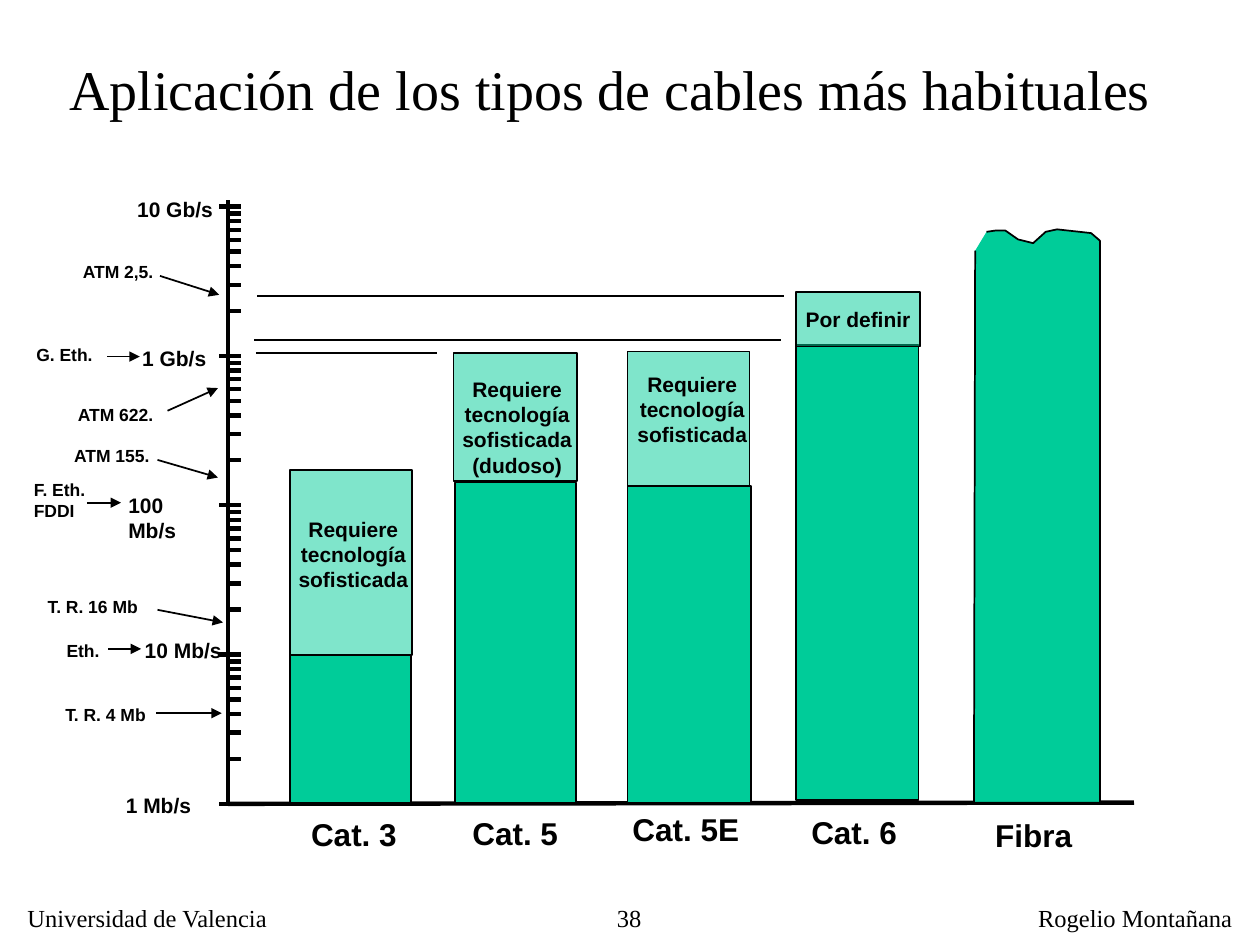
import math

from lxml import etree
from pptx import Presentation
from pptx.dml.color import RGBColor
from pptx.enum import shapes, text
from pptx.oxml.ns import qn
from pptx.util import Inches, Pt

BLACK = RGBColor(0x00, 0x00, 0x00)
GREEN = RGBColor(0x00, 0xCC, 0x99)
SERIF, SANS = "Times New Roman", "Arial"
LEFT, CENTER, RIGHT = text.PP_ALIGN.LEFT, text.PP_ALIGN.CENTER, text.PP_ALIGN.RIGHT

AXIS_X, AXIS_TOP, AXIS_BOTTOM = 1.81, 1.59, 6.38
DECADES = 4
DECADE = (AXIS_BOTTOM - 1.64) / DECADES
BAR_BOTTOM = 6.37
ADVANCED = ["Requiere", "tecnología", "sofisticada"]

# left, top, width, height
SOLID_BARS = [
    (2.3, 5.2, 0.96, 1.17),
    (3.61, 3.83, 0.96, 2.54),
    (4.98, 3.86, 0.98, 2.51),
    (6.32, 2.74, 0.97, 3.61),
]
EXTENDED_BARS = [
    (2.3, 3.73, 0.97, 1.47),
    (3.6, 2.8, 0.98, 1.02),
    (4.98, 2.79, 0.97, 1.07),
    (6.32, 2.32, 0.98, 0.43),
]
FIBRE_OUTLINE = [
    (7.74, 1.99), (7.73, BAR_BOTTOM), (8.73, BAR_BOTTOM), (8.73, 1.91),
    (8.66, 1.85), (8.39, 1.82), (8.3, 1.84), (8.2, 1.93),
    (8.08, 1.9), (7.98, 1.83), (7.9, 1.83), (7.83, 1.84),
]
# lines of text, then left, top, width, height
CABLES = [
    (["Cat. 3"], 2.37, 6.42, 0.88, 0.4),
    (["Cat. 5"], 3.65, 6.41, 0.88, 0.4),
    (["Cat. 5E"], 4.92, 6.38, 1.05, 0.4),
    (["Cat. 6"], 6.34, 6.4, 0.88, 0.4),
    (["Fibra"], 7.8, 6.43, 0.81, 0.4),
]
SPEEDS = [
    (["1 Mb/s"], 0.9, 6.24, 0.72, 0.3),
    (["10 Mb/s"], 1.05, 5.01, 0.81, 0.3),
    (["100 Mb/s"], 0.92, 3.86, 0.9, 0.3),
    (["1 Gb/s"], 1.03, 2.69, 0.71, 0.3),
    (["10 Gb/s"], 0.99, 1.51, 0.8, 0.3),
]
NETWORKS = [
    (["T. R. 4 Mb"], 0.42, 5.54, 0.86, 0.27),
    (["Eth."], 0.43, 5.03, 0.46, 0.27),
    (["T. R. 16 Mb"], 0.28, 4.68, 0.93, 0.27),
    (["F. Eth.", "FDDI"], 0.17, 3.75, 0.62, 0.43),
    (["ATM 155."], 0.49, 3.48, 0.81, 0.27),
    (["ATM 622."], 0.52, 3.16, 0.81, 0.27),
    (["G. Eth."], 0.19, 2.68, 0.65, 0.27),
    (["ATM 2,5."], 0.56, 2.02, 0.77, 0.27),
]
BAR_NOTES = [
    (ADVANCED, 2.27, 4.05, 1.07, 0.7),
    (ADVANCED + ["(dudoso)"], 3.57, 2.94, 1.07, 0.9),
    (ADVANCED, 4.96, 2.9, 1.07, 0.7),
    (["Por definir"], 6.29, 2.38, 1.04, 0.3),
]
# x and y of the start, x and y of the end
ARROWS = [
    (1.24, 5.66, 1.76, 5.66),
    (0.86, 5.15, 1.12, 5.15),
    (1.25, 4.84, 1.77, 4.94),
    (0.69, 3.99, 0.96, 3.99),
    (1.25, 3.65, 1.73, 3.79),
    (1.33, 3.26, 1.73, 3.08),
    (0.85, 2.83, 1.11, 2.83),
    (1.27, 2.19, 1.74, 2.34),
]
LEVEL_LINES = [
    (2.03, 2.8, 3.47, 2.8),
    (2.02, 2.7, 6.2, 2.7),
    (2.04, 2.35, 6.22, 2.35),
]


class Canvas:
    def __init__(self, slide):
        self.shapes = slide.shapes

    def fill_frame(self, frame, lines, size, font, bold=False, align=LEFT):
        frame.word_wrap = False
        frame.vertical_anchor = text.MSO_ANCHOR.TOP
        for index, line in enumerate(lines):
            para = frame.add_paragraph() if index else frame.paragraphs[0]
            para.alignment = align
            span = para.add_run()
            span.text = line
            span.font.size = Pt(size)
            span.font.name = font
            span.font.bold = bold
            span.font.color.rgb = BLACK

    def title(self, line, left, top, width, height):
        box = self.shapes.title
        box.left, box.top = Inches(left), Inches(top)
        box.width, box.height = Inches(width), Inches(height)
        box.text_frame.auto_size = text.MSO_AUTO_SIZE.NONE
        self.fill_frame(box.text_frame, [line], 32, SERIF)

    def label(self, lines, left, top, width, height, size, font=SANS, align=LEFT):
        box = self.shapes.add_textbox(
            Inches(left), Inches(top), Inches(width), Inches(height))
        self.fill_frame(box.text_frame, lines, size, font, font == SANS, align)

    def line(self, x1, y1, x2, y2, weight=1, arrow=False):
        line = self.shapes.add_connector(
            shapes.MSO_CONNECTOR.STRAIGHT,
            Inches(x1), Inches(y1), Inches(x2), Inches(y2))
        line.line.color.rgb = BLACK
        line.line.width = Pt(weight)
        properties = line._element.spPr
        if arrow:
            etree.SubElement(properties.find(qn("a:ln")), qn("a:tailEnd"), type="triangle")
        etree.SubElement(properties, qn("a:effectLst"))

    def paint(self, shape, opacity=100):
        shape.shadow.inherit = False
        shape.fill.solid()
        shape.fill.fore_color.rgb = GREEN
        shape.line.color.rgb = BLACK
        shape.line.width = Pt(1)
        if opacity < 100:
            color = shape._element.spPr.find(qn("a:solidFill"))[0]
            etree.SubElement(color, qn("a:alpha"), val=str(opacity * 1000))

    def bar(self, left, top, width, height, opacity=100):
        self.paint(self.shapes.add_shape(
            shapes.MSO_SHAPE.RECTANGLE,
            Inches(left), Inches(top), Inches(width), Inches(height)), opacity)

    def outline(self, points):
        """Draw a filled outline whose last side stays open."""
        corners = [(Inches(x), Inches(y)) for x, y in points]
        builder = self.shapes.build_freeform(*corners[0], scale=1.0)
        builder.add_line_segments(corners[1:], close=False)
        self.paint(builder.convert_to_shape())

    def log_axis(self):
        self.line(AXIS_X, AXIS_BOTTOM, AXIS_X, AXIS_TOP, 2.5)
        for decade in range(DECADES + 1):
            base = AXIS_BOTTOM - decade * DECADE
            self.line(1.74, base, 1.91, base, 2.5)
            if decade < DECADES:
                for digit in range(2, 10):
                    y = base - math.log10(digit) * DECADE
                    self.line(1.82, y, 1.91, y, 2.5)
        self.line(AXIS_X, AXIS_BOTTOM, 9, BAR_BOTTOM, 2.5)


def main():
    deck = Presentation()
    deck.slide_width, deck.slide_height = Inches(10), Inches(7.5)
    page = Canvas(deck.slides.add_slide(deck.slide_layouts[5]))

    page.title("Aplicación de los tipos de cables más habituales", 0.45, 0.38, 8.9, 0.63)
    page.label(["38"], 4.13, 7.12, 1.06, 0.31, 14, SERIF, RIGHT)
    page.label(["Universidad de Valencia"], 0.12, 7.12, 2.13, 0.33, 14, SERIF)
    page.label(["Rogelio Montañana"], 8.14, 7.12, 1.74, 0.33, 14, SERIF)

    page.log_axis()
    for bar in SOLID_BARS:
        page.bar(*bar)
    page.outline(FIBRE_OUTLINE)
    for bar in EXTENDED_BARS:
        page.bar(*bar, opacity=50)
    for line in LEVEL_LINES:
        page.line(*line)
    for arrow in ARROWS:
        page.line(*arrow, arrow=True)
    for labels, size, align in [(CABLES, 18, LEFT), (SPEEDS, 12, LEFT),
                                (NETWORKS, 10, LEFT), (BAR_NOTES, 12, CENTER)]:
        for label in labels:
            page.label(*label, size=size, align=align)

    deck.save("out.pptx")


if __name__ == "__main__":
    main()
